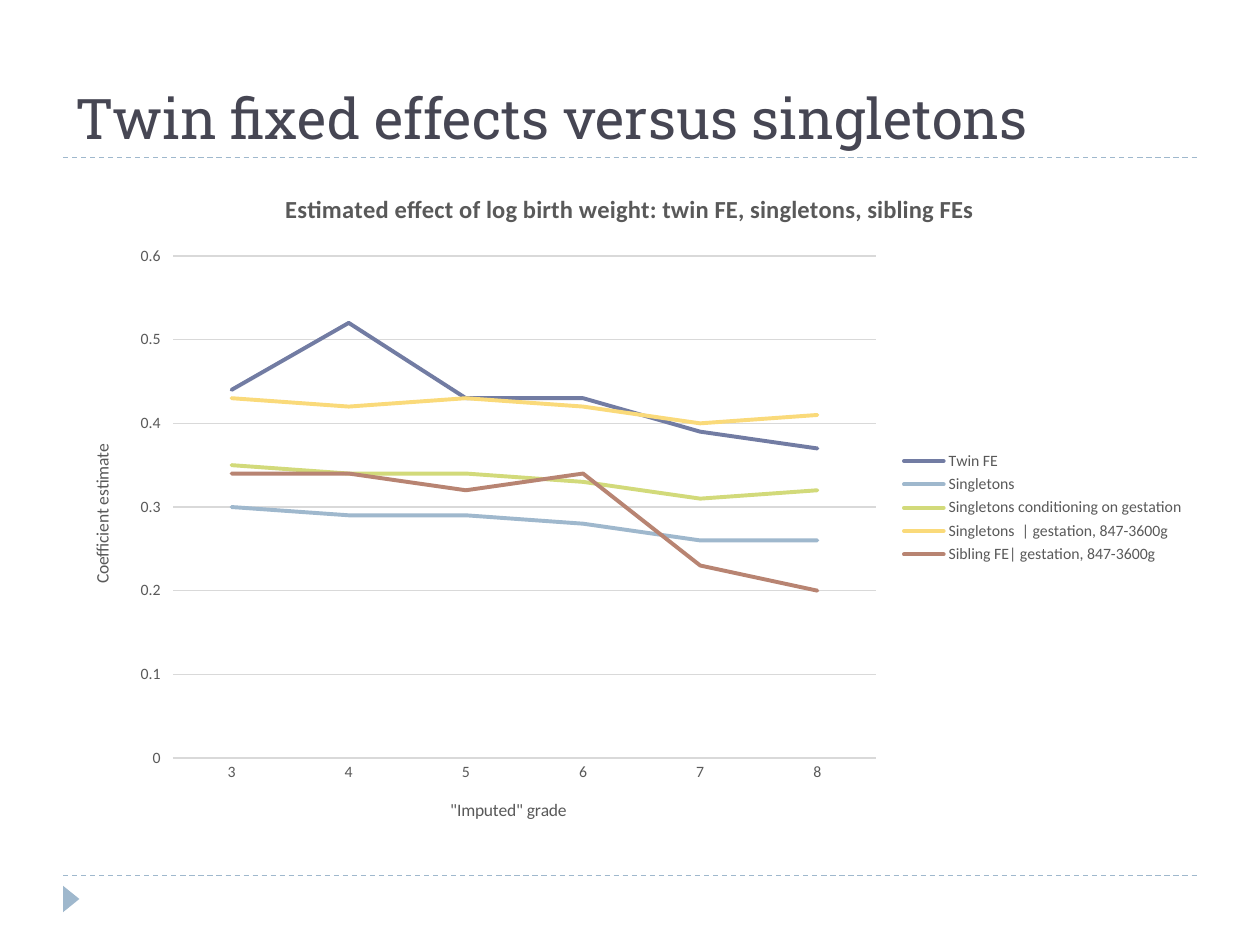
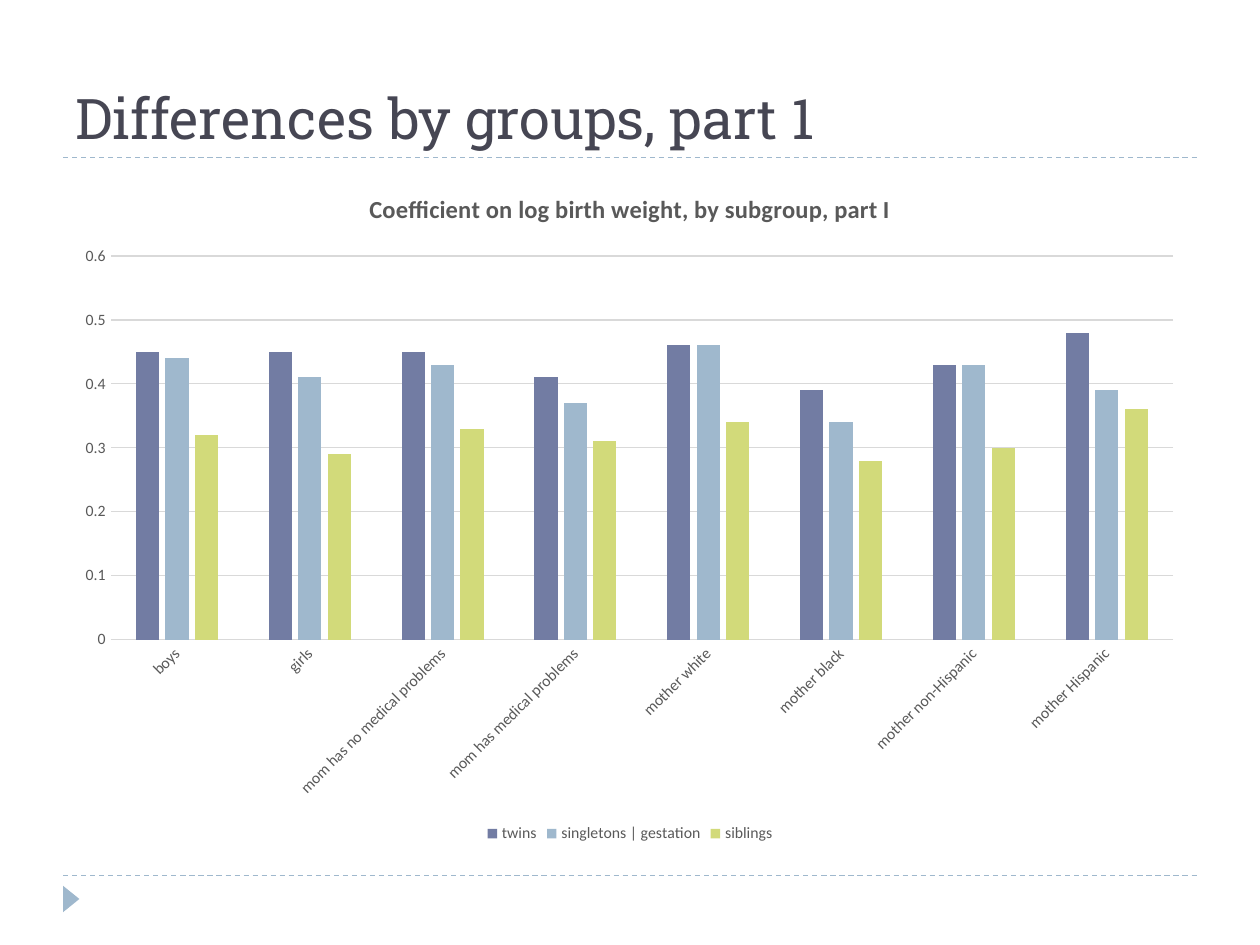
from lxml import etree
from pptx import Presentation
from pptx import util as u
from pptx.chart.data import CategoryChartData
from pptx.dml.color import RGBColor
from pptx.enum import chart as kinds, dml, shapes, text
from pptx.oxml import parse_xml
from pptx.oxml.ns import nsdecls, qn

INK, GREY, GRID = "464653", "595959", "D9D9D9"
PALETTE = ["727CA3", "9FB8CD", "D2DA7A", "FADA7A", "B88472"]
ACCENT = PALETTE[1]
HEAD_FONT, CHART_FONT = "Roboto Slab", "Calibri"
TITLE_BOX = (0.5, 0.17, 9, 1.08)
CHART_BOX = (0.5, 1.33, 9, 5.4)
RULE_TOPS = (1.25, 6.95)

GRADES = ["3", "4", "5", "6", "7", "8"]
ESTIMATES = {
    "Twin FE": [0.44, 0.52, 0.43, 0.43, 0.39, 0.37],
    "Singletons": [0.3, 0.29, 0.29, 0.28, 0.26, 0.26],
    "Singletons conditioning on gestation": [0.35, 0.34, 0.34, 0.33, 0.31, 0.32],
    "Singletons  | gestation, 847-3600g": [0.43, 0.42, 0.43, 0.42, 0.4, 0.41],
    "Sibling FE| gestation, 847-3600g": [0.34, 0.34, 0.32, 0.34, 0.23, 0.2],
}
GROUPS = ["boys", "girls", "mom has no medical problems", "mom has medical problems",
          "mother white", "mother black", "mother non-Hispanic", "mother Hispanic"]
COEFFICIENTS = {
    "twins": [0.45, 0.45, 0.45, 0.41, 0.46, 0.39, 0.43, 0.48],
    "singletons | gestation": [0.44, 0.41, 0.43, 0.37, 0.46, 0.34, 0.43, 0.39],
    "siblings": [0.32, 0.29, 0.33, 0.31, 0.34, 0.28, 0.3, 0.36],
}


def colour(value):
    """Turn a hex string into a colour."""
    return RGBColor.from_string(value)


def inches(box):
    """Turn a box of numbers into lengths."""
    return [u.Inches(length) for length in box]


def style_font(font, size=9, shade=GREY, name=CHART_FONT, bold=False):
    """Format one font."""
    font.size, font.name, font.bold = u.Pt(size), name, bold
    font.color.rgb = colour(shade)


def write(frame, words, **style):
    """Put formatted words into the first paragraph of a frame."""
    para = frame.paragraphs[0]
    span = para.add_run()
    span.text = words
    style_font(span.font, **style)
    return para


def style_line(line, shade, width=0.75):
    """Give a line its colour and width."""
    line.color.rgb = colour(shade)
    line.width = u.Pt(width)


def add_rule(page, left, top, width):
    """Draw a dashed rule across the page."""
    rule = page.shapes.add_connector(
        shapes.MSO_CONNECTOR.STRAIGHT, *inches((left, top, left + width, top)))
    style_line(rule.line, ACCENT)
    rule.line.dash_style = dml.MSO_LINE.DASH
    etree.SubElement(rule._element.spPr, qn("a:effectLst"))


def add_marker(page, left, top, width, height):
    """Draw the small triangle that points right in the footer."""
    marker = page.shapes.add_shape(
        shapes.MSO_SHAPE.ISOSCELES_TRIANGLE, *inches((left, top, width, height)))
    marker.rotation = 90
    marker.shadow.inherit = False
    marker.fill.solid()
    marker.fill.fore_color.rgb = colour(ACCENT)
    marker.line.fill.background()


def add_page(deck, heading):
    """Add a page with its title, rules and footer marker."""
    page = deck.slides.add_slide(deck.slide_layouts[5])
    for top in RULE_TOPS:
        add_rule(page, TITLE_BOX[0], top, TITLE_BOX[2])
    add_marker(page, 0.46, 7.07, 0.21, 0.13)
    title = page.shapes.title
    title.left, title.top, title.width, title.height = inches(TITLE_BOX)
    frame = title.text_frame
    frame.auto_size = text.MSO_AUTO_SIZE.NONE
    frame.vertical_anchor = text.MSO_ANCHOR.BOTTOM
    para = write(frame, heading, size=32, shade=INK, name=HEAD_FONT)
    para.alignment = text.PP_ALIGN.LEFT
    return page


def place_plot(chart, left, top, width, height):
    """Fix the inner plot area as fractions of the chart."""
    area = chart._chartSpace.chart.plotArea
    for old in area.findall(qn("c:layout")):
        area.remove(old)
    parts = "".join(f'<c:{tag} val="{value}"/>' for tag, value in (
        ("layoutTarget", "inner"), ("xMode", "edge"), ("yMode", "edge"),
        ("x", left), ("y", top), ("w", width), ("h", height)))
    area.insert(0, parse_xml(
        f'<c:layout {nsdecls("c")}><c:manualLayout>{parts}</c:manualLayout></c:layout>'))


def style_axes(chart):
    """Format the axes, their labels and the gridlines."""
    category, value = chart.category_axis, chart.value_axis
    for axis in (category, value):
        axis.major_tick_mark = axis.minor_tick_mark = kinds.XL_TICK_MARK.NONE
        style_font(axis.tick_labels.font)
    style_line(category.format.line, GRID)
    value.format.line.fill.background()
    value.minimum_scale, value.maximum_scale, value.major_unit = 0, 0.6, 0.1
    value.has_major_gridlines = True
    style_line(value.major_gridlines.format.line, GRID)


def add_chart(page, box, kind, heading, categories, values, legend_side, plot_area):
    """Add a chart with its heading, legend and formatted axes."""
    data = CategoryChartData()
    data.categories = categories
    for name, numbers in values.items():
        data.add_series(name, numbers)
    chart = page.shapes.add_chart(kind, *inches(box), data).chart
    style_font(chart.font, size=10, shade="000000")
    chart.has_title = True
    write(chart.chart_title.text_frame, heading, size=14, bold=True)
    chart.has_legend = True
    chart.legend.position = legend_side
    chart.legend.include_in_layout = False
    style_font(chart.legend.font)
    style_axes(chart)
    place_plot(chart, *plot_area)
    chart.plots[0].vary_by_categories = False
    return chart


def build_line_page(deck):
    """Compare estimates by grade as lines."""
    page = add_page(deck, "Twin fixed effects versus singletons")
    chart = add_chart(
        page, CHART_BOX, kinds.XL_CHART_TYPE.LINE,
        "Estimated effect of log birth weight: twin FE, singletons, sibling FEs",
        GRADES, ESTIMATES, kinds.XL_LEGEND_POSITION.RIGHT, (0.097, 0.13, 0.62, 0.738))
    chart.value_axis.major_tick_mark = kinds.XL_TICK_MARK.OUTSIDE
    for axis, words in ((chart.category_axis, '"Imputed" grade'),
                        (chart.value_axis, "Coefficient estimate")):
        write(axis.axis_title.text_frame, words, size=10)
    for series, shade in zip(chart.plots[0].series, PALETTE):
        series.smooth = False
        series.marker.style = kinds.XL_MARKER_STYLE.NONE
        style_line(series.format.line, shade, 2.25)
        series.format.line._ln.set("cap", "rnd")


def build_column_page(deck):
    """Compare coefficients by subgroup as columns."""
    page = add_page(deck, "Differences by groups, part 1")
    chart = add_chart(
        page, CHART_BOX, kinds.XL_CHART_TYPE.COLUMN_CLUSTERED,
        "Coefficient on log birth weight, by subgroup, part I",
        GROUPS, COEFFICIENTS, kinds.XL_LEGEND_POSITION.BOTTOM, (0.042, 0.13, 0.937, 0.564))
    plot = chart.plots[0]
    plot.gap_width, plot.overlap = 219, -27
    labels = chart.category_axis._element.find(qn("c:txPr"))
    labels.find(qn("a:bodyPr")).set("rot", "-2700000")
    for series, shade in zip(plot.series, PALETTE):
        series.format.fill.solid()
        series.format.fill.fore_color.rgb = colour(shade)


def main():
    """Build and save the deck."""
    deck = Presentation()
    deck.slide_width, deck.slide_height = inches((10, 7.5))
    build_line_page(deck)
    build_column_page(deck)
    deck.save("out.pptx")


if __name__ == "__main__":
    main()
